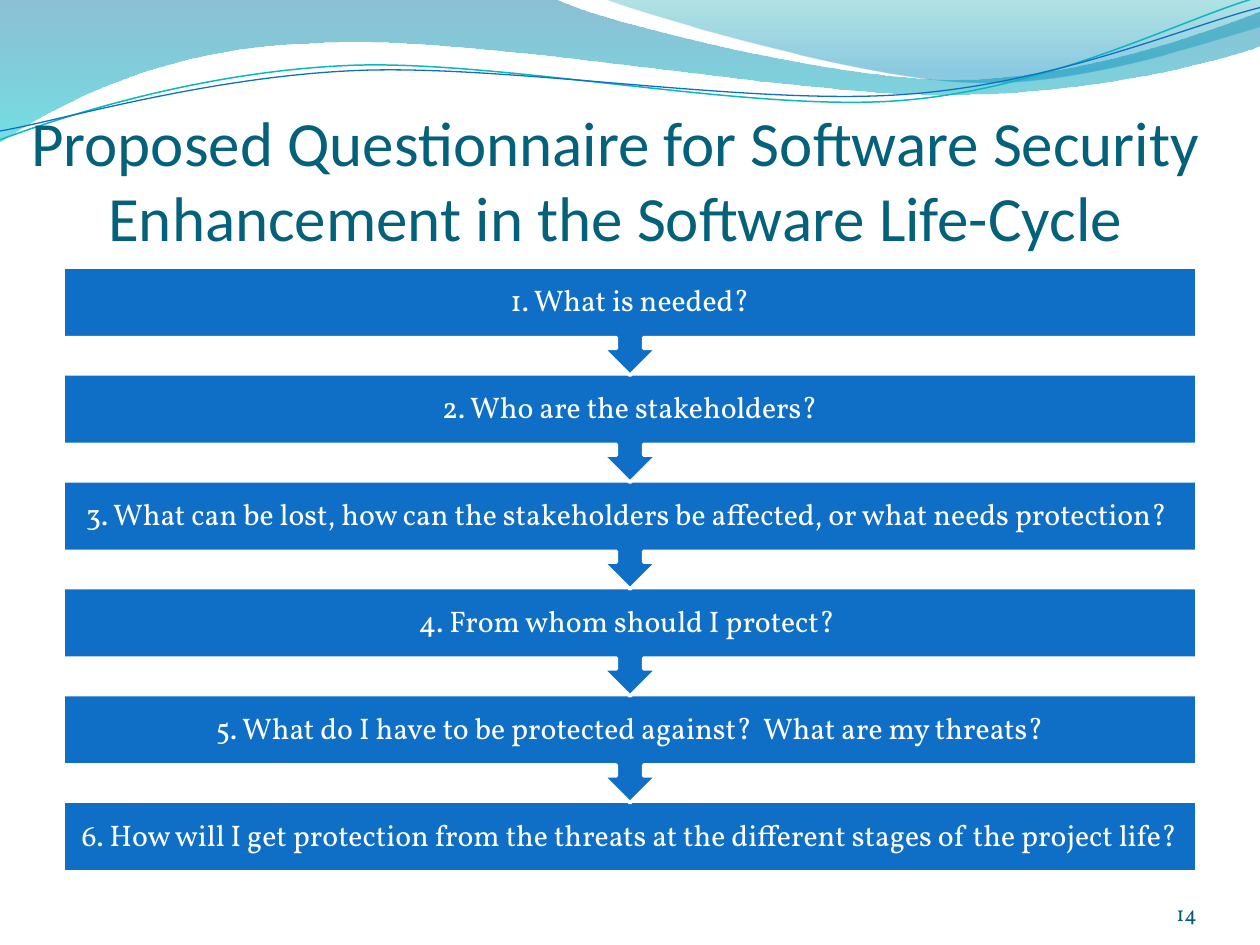
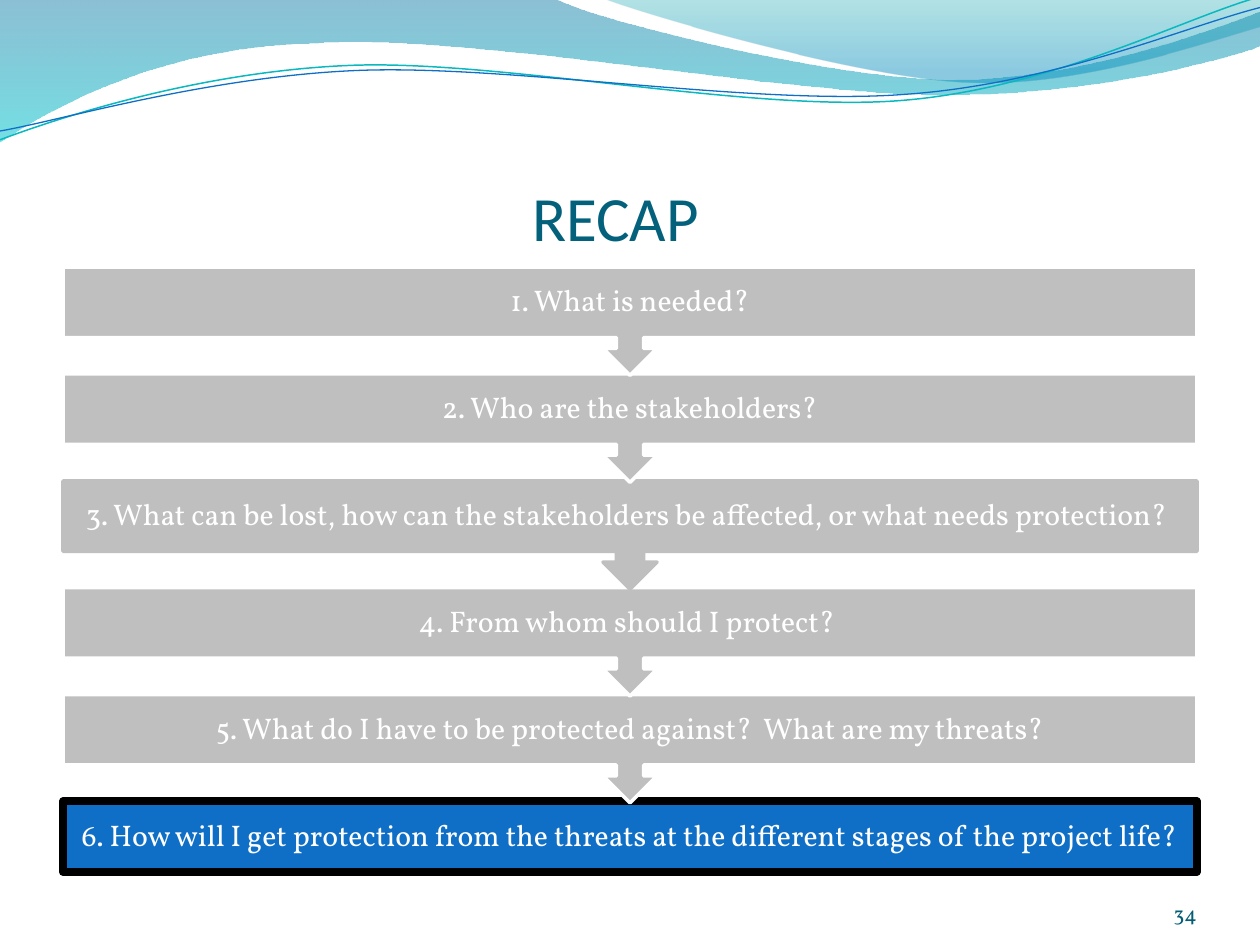
from dataclasses import dataclass

from lxml import etree
from pptx import Presentation
from pptx.dml.color import RGBColor
from pptx.enum.shapes import MSO_SHAPE
from pptx.enum.text import MSO_ANCHOR, PP_ALIGN
from pptx.oxml.ns import qn
from pptx.util import Inches, Pt

RECT, CALLOUT = MSO_SHAPE.RECTANGLE, MSO_SHAPE.UP_ARROW_CALLOUT
MIDDLE, BOTTOM = MSO_ANCHOR.MIDDLE, MSO_ANCHOR.BOTTOM
CENTER, RIGHT = PP_ALIGN.CENTER, PP_ALIGN.RIGHT
TOP_TO_BOTTOM = 270
BLANK = 6


@dataclass(frozen=True)
class Theme:
    blue: str = "0F6FC6"
    teal: str = "0AB8BF"
    gray: str = "BFBFBF"
    white: str = "FFFFFF"
    black: str = "000000"
    title: str = "04617B"
    number: str = "045D75"
    heading_font: str = "Calibri"
    body_font: str = "Vollkorn"
    title_size: float = 36
    step_size: float = 17
    number_size: float = 12
    outline: float = 2
    highlight_outline: float = 4.5


THEME = Theme()

# A node of two numbers is a corner; one of six is a Bézier curve.
BANDS = [
    ([(0, 0), (4.4, -0.01), (4.76, 0.17, 6.64, 0.63, 7.58, 0.63),
      (8.53, 0.63, 9.58, 0.26, 10, 0.09), (10.01, 0.36),
      (9.83, 0.44, 8.7, 0.76, 7.46, 0.75), (6.22, 0.75, 3.82, 0.28, 2.57, 0.34),
      (1.29, 0.36, 0.46, 0.83, -0.01, 1.13), (0, 0)],
     [(0, "0074A1", 45), (1, "00C6CF", 55)]),
    ([(4.79, -0.01), (5.09, 0.11, 6.82, 0.62, 7.69, 0.65),
      (8.56, 0.69, 9.61, 0.32, 10, 0.21), (10, 0), (4.79, -0.01)],
     [(0, "00A1A9", 30), (0.8, "008BBF", 45)]),
]
STRANDS = [
    ([(0, 1.11), (0.48, 0.93, 1.58, 0.57, 2.77, 0.52),
      (3.95, 0.47, 5.93, 0.89, 7.13, 0.8), (8.33, 0.71, 9.38, 0.15, 9.98, -0.02)],
     THEME.teal, 0.85),
    ([(0, 1.04), (0.47, 0.96, 1.64, 0.61, 2.83, 0.56),
      (4.03, 0.51, 5.97, 0.84, 7.17, 0.75), (8.36, 0.67, 9.41, 0.21, 10, 0.06)],
     THEME.blue, 0.75),
]

QUESTIONS = [
    "1. What is needed?",
    "2. Who are the stakeholders?",
    "3. What can be lost, how can the stakeholders be affected, or what needs protection? ",
    "4. From whom should I protect? ",
    "5. What do I have to be protected against?  What are my threats?",
    "6. How will I get protection from the threats at the different stages of the project life?",
]
STEP_LEFT, STEP_WIDTH = 0.5, 9
FIRST_TOP, LAST_TOP = 2.12, 6.36
STEP_PITCH = (LAST_TOP - FIRST_TOP) / (len(QUESTIONS) - 1)
BOX_HEIGHT, CALLOUT_HEIGHT = 0.56, 0.86

BLUE_STEP = (THEME.blue, THEME.white, THEME.outline)
GRAY_STEP = (THEME.gray, THEME.white, THEME.outline)
GRAY_EDGED_STEP = (THEME.gray, THEME.gray, THEME.outline)
CURRENT_STEP = (THEME.blue, THEME.black, THEME.highlight_outline)


def rgb(color):
    return RGBColor.from_string(color)


def set_line(line, color, width):
    line.color.rgb = rgb(color)
    line.width = Pt(width)


def add_outline(shapes, nodes, closed):
    """Draw the nodes as one freeform whose curves are true Béziers."""
    start, *points = [(Inches(node[i]), Inches(node[i + 1]))
                      for node in nodes for i in range(0, len(node), 2)]
    builder = shapes.build_freeform(*start)
    builder.add_line_segments(points, close=closed)
    sp = builder.convert_to_shape()
    sp.shadow.inherit = False
    segments = iter(list(sp._element.iter(qn("a:lnTo"))))
    for node in nodes[1:]:
        legs = [next(segments) for _ in range(len(node) // 2)]
        if len(legs) == 3:
            curve = legs[0].makeelement(qn("a:cubicBezTo"))
            legs[0].addprevious(curve)
            for leg in legs:
                curve.append(leg[0])
                leg.getparent().remove(leg)
    return sp


def add_band(shapes, nodes, stops):
    sp = add_outline(shapes, nodes, closed=True)
    sp.line.fill.background()
    sp.fill.gradient()
    sp.fill.gradient_angle = TOP_TO_BOTTOM
    for stop, (position, color, _) in zip(sp.fill.gradient_stops, stops):
        stop.position = position
        stop.color.rgb = rgb(color)
    for clr, (_, _, opacity) in zip(sp._element.iter(qn("a:srgbClr")), stops):
        etree.SubElement(clr, qn("a:alpha"), val=str(opacity * 1000))


def add_strand(shapes, nodes, color, width):
    sp = add_outline(shapes, nodes, closed=False)
    sp.fill.background()
    set_line(sp.line, color, width)


def add_label(shapes, place, text, font, size, color, align, anchor, margins, spacing=None):
    tf = shapes.add_textbox(*map(Inches, place)).text_frame
    sides = ("margin_left", "margin_top", "margin_right", "margin_bottom")
    frame = dict(zip(sides, map(Inches, margins)), word_wrap=True, vertical_anchor=anchor)
    for name, value in frame.items():
        setattr(tf, name, value)
    p = tf.paragraphs[0]
    p.alignment, p.line_spacing = align, spacing
    r = p.add_run()
    r.text = text
    for name, value in {"name": font, "size": Pt(size)}.items():
        setattr(r.font, name, value)
    r.font.color.rgb = rgb(color)


def add_step(shapes, index, style):
    """Draw a question box; all but the last carry an arrow to the next."""
    last = index == len(QUESTIONS) - 1
    kind, height, turn = (RECT, BOX_HEIGHT, 0) if last else (CALLOUT, CALLOUT_HEIGHT, 180)
    place = (STEP_LEFT, FIRST_TOP + index * STEP_PITCH, STEP_WIDTH)
    sp = shapes.add_shape(kind, *map(Inches, (*place, height)))
    sp.rotation = turn
    sp.shadow.inherit = False
    fill, edge, width = style
    sp.fill.solid()
    sp.fill.fore_color.rgb = rgb(fill)
    set_line(sp.line, edge, width)
    add_label(shapes, (*place, BOX_HEIGHT), QUESTIONS[index], THEME.body_font,
              THEME.step_size, THEME.white, CENTER, MIDDLE, (0.13,) * 4, 0.9)


def add_question_slide(prs, title, number, styles):
    shapes = prs.slides.add_slide(prs.slide_layouts[BLANK]).shapes
    for band in BANDS:
        add_band(shapes, *band)
    strands = shapes.add_group_shape().shapes
    for strand in STRANDS:
        add_strand(strands, *strand)
    add_label(shapes, (0, 0.77, 9.77, 1.25), title, THEME.heading_font,
              THEME.title_size, THEME.title, CENTER, BOTTOM, (0, 0.05, 0, 0))
    # Bottom step first, so that each arrow tip lies over the step below it.
    steps = shapes.add_group_shape().shapes
    for index in reversed(range(len(QUESTIONS))):
        add_step(steps, index, styles[index])
    add_label(shapes, (8.67, 6.95, 0.83, 0.4), number, THEME.body_font,
              THEME.number_size, THEME.number, RIGHT, BOTTOM, (0,) * 4)


def main():
    prs = Presentation()
    prs.slide_width, prs.slide_height = Inches(10), Inches(7.5)
    add_question_slide(
        prs, "Proposed Questionnaire for Software Security Enhancement in the Software Life-Cycle",
        "14", [BLUE_STEP] * 6)
    add_question_slide(
        prs, "RECAP", "34",
        [GRAY_STEP] * 2 + [GRAY_EDGED_STEP] + [GRAY_STEP] * 2 + [CURRENT_STEP])
    prs.save("out.pptx")


if __name__ == "__main__":
    main()
